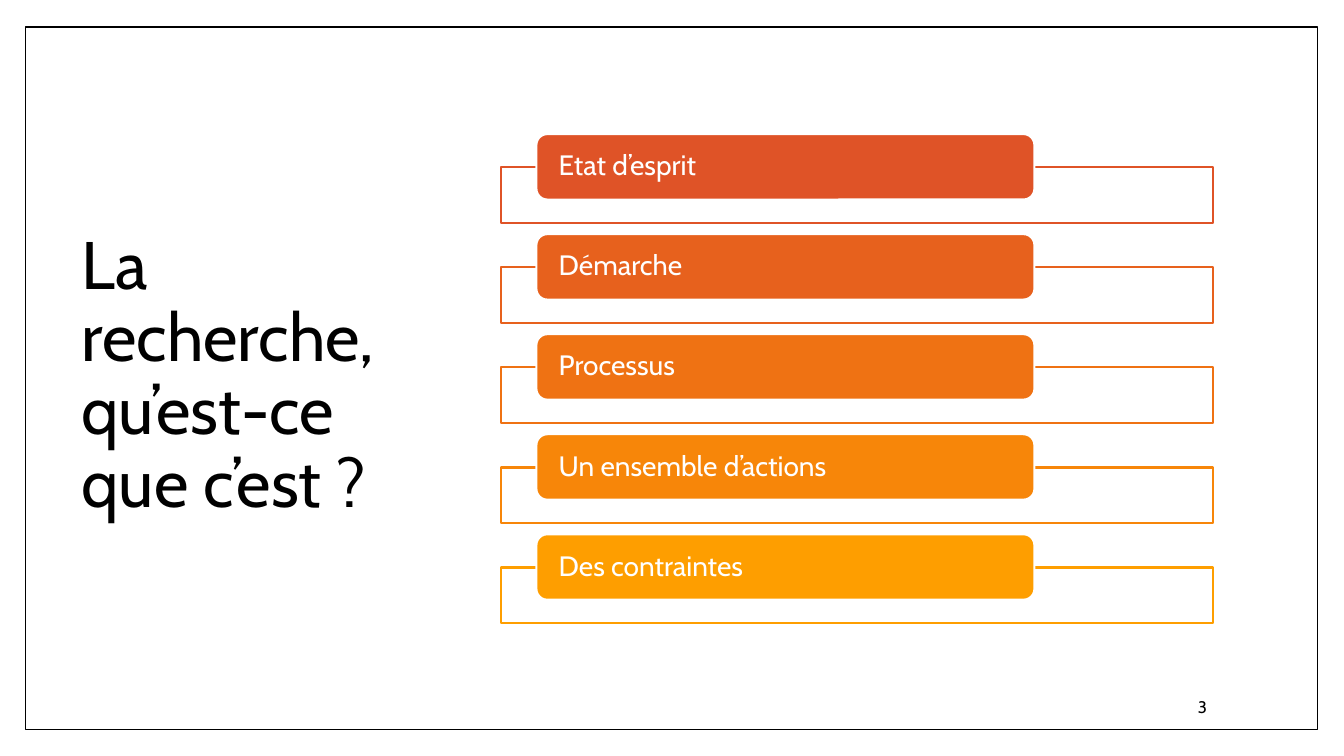
from pptx import Presentation
from pptx.dml.color import RGBColor
from pptx.enum import shapes, text
from pptx.oxml.ns import qn
from pptx.util import Inches, Pt

FONT = "Cabin"
ASPECTS = [
    ("Etat d’esprit", "DF5327"),
    ("Démarche", "E7611D"),
    ("Processus", "EF7213"),
    ("Un ensemble d’actions", "F78609"),
    ("Des contraintes", "FE9E00"),
]
FIRST_TOP, PITCH = 1.33, 0.993 - 0.001 / 2


def rgb(value):
    return RGBColor.from_string(value)


def add_box(s, kind, at, fill, line, width):
    sp = s.shapes.add_shape(kind, *map(Inches, at))
    sp.shadow.inherit = False
    sp.fill.solid()
    sp.fill.fore_color.rgb = rgb(fill)
    sp.line.color.rgb = rgb(line)
    sp.line.width = Pt(width)
    return sp


def set_opacity(sp, percent):
    color = sp._element.spPr.find(qn("a:solidFill"))[0]
    alpha = color.makeelement(qn("a:alpha"), {"val": str(percent * 1000)})
    color.append(alpha)


def write(sp, words, size, color, align=text.PP_ALIGN.LEFT, spacing=0.9):
    """Put one vertically centred, wrapped paragraph into a shape."""
    tf = sp.text_frame
    tf.word_wrap = True
    tf.vertical_anchor = text.MSO_ANCHOR.MIDDLE
    p = tf.paragraphs[0]
    p.text = words
    p.alignment = align
    p.line_spacing = spacing
    p.font.name = FONT
    p.font.size = Pt(size)
    p.font.color.rgb = rgb(color)


def add_text(s, at, words, size, **layout):
    write(s.shapes.add_textbox(*map(Inches, at)), words, size, "000000", **layout)


def add_aspect(s, top, label, color):
    """Draw an outlined bar with a coloured label overlapping its top edge."""
    bar = add_box(s, shapes.MSO_SHAPE.RECTANGLE, (4.97, top + 0.33, 7.06, 0.55),
                  "FFFFFF", color, 1.5)
    set_opacity(bar, 90)
    pill = add_box(s, shapes.MSO_SHAPE.ROUNDED_RECTANGLE, (5.32, top, 4.94, 0.65),
                   color, "FFFFFF", 1.5)
    tf = pill.text_frame
    tf.margin_left = tf.margin_right = Inches(0.19)
    tf.margin_top = tf.margin_bottom = 0
    write(pill, label, 20, "FFFFFF")


def main():
    prs = Presentation()
    prs.slide_width, prs.slide_height = Inches(13.33), Inches(7.5)
    s = prs.slides.add_slide(prs.slide_layouts[6])
    add_box(s, shapes.MSO_SHAPE.RECTANGLE, (0.25, 0.27, 12.82, 6.97),
            "FFFFFF", "000000", 1)
    add_text(s, (0.71, 0.67, 3.68, 6.13), "La recherche, qu’est-ce que c’est ?", 48)
    for i, (label, color) in enumerate(ASPECTS):
        add_aspect(s, FIRST_TOP + i * PITCH, label, color)
    add_text(s, (10.2, 6.81, 1.87, 0.4), "3", 12,
             align=text.PP_ALIGN.RIGHT, spacing=1.0)
    prs.save("out.pptx")


if __name__ == "__main__":
    main()
